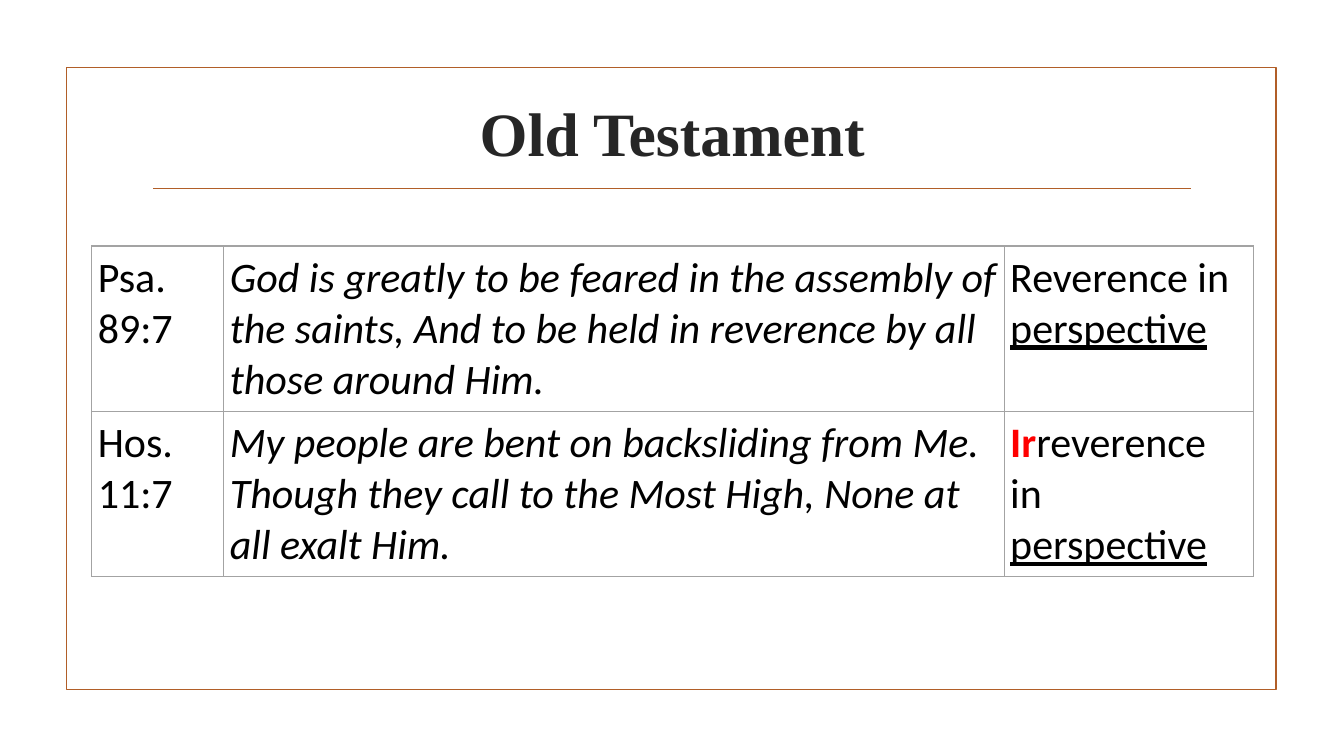
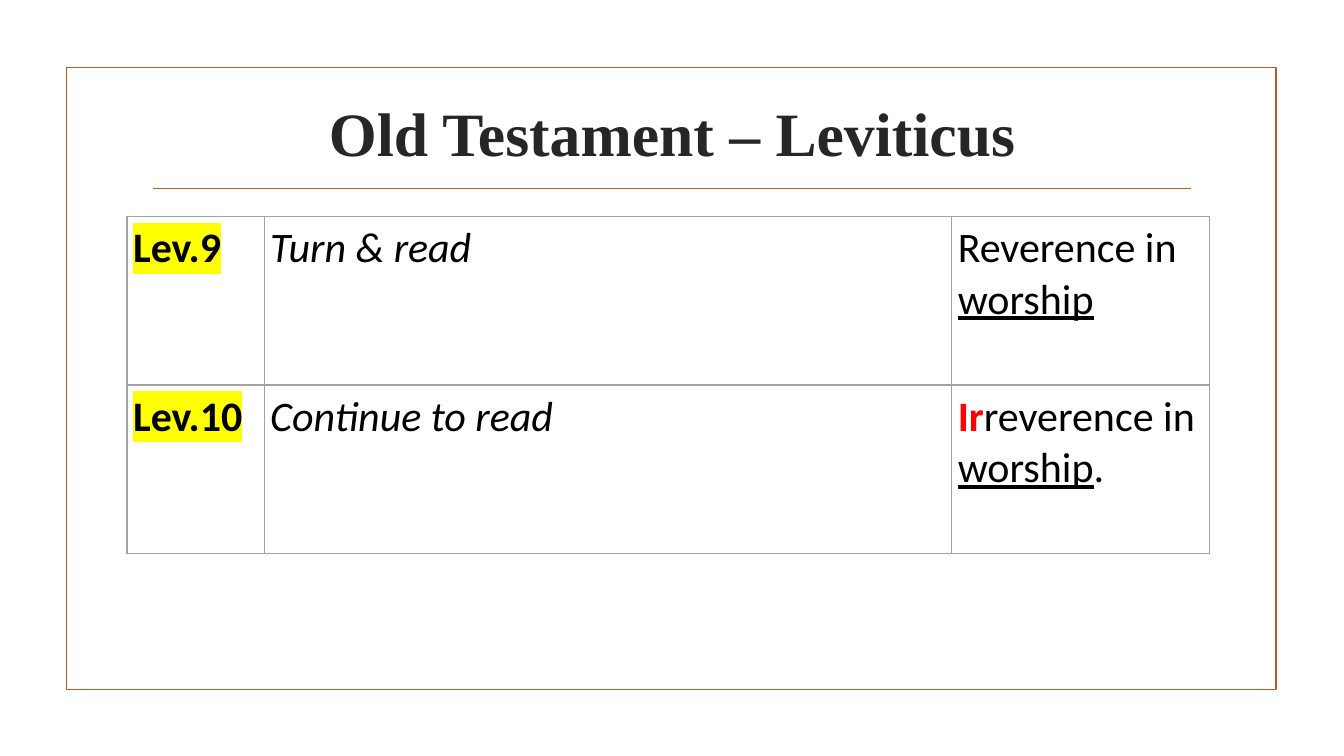
from dataclasses import dataclass

from lxml import etree
from pptx import Presentation
from pptx.dml.color import RGBColor
from pptx.enum.shapes import MSO_CONNECTOR, MSO_SHAPE
from pptx.enum.text import MSO_ANCHOR, PP_ALIGN
from pptx.oxml.ns import qn
from pptx.slide import Slide
from pptx.table import _Cell
from pptx.text.text import _Run
from pptx.util import Inches, Pt

RECTANGLE = MSO_SHAPE.RECTANGLE
STRAIGHT = MSO_CONNECTOR.STRAIGHT
MIDDLE = MSO_ANCHOR.MIDDLE
CENTER = PP_ALIGN.CENTER

SLIDE_WIDTH, SLIDE_HEIGHT = 13.33, 7.5
FRAME = (0.66, 0.67, 12, 6.17)
TITLE_AREA = (1.42, 0.83, 10.5, 0.96)
RULE_LEFT, RULE_RIGHT, RULE_TOP = 1.52, 11.81, 1.87
CELL_MARGIN = 0.06
COLORS = {
    "accent": "B15E28",
    "title": "262626",
    "text": "000000",
    "warning": "FF0000",
    "highlight": "FFFF00",
    "border": "A3A3A3",
}
TITLE_FONT, BODY_FONT = "Times New Roman", "Calibri"


@dataclass(frozen=True)
class Span:
    text: str
    bold: bool = False
    italic: bool = False
    underline: bool = False
    highlight: bool = False
    color: str = "text"


@dataclass(frozen=True)
class VersePage:
    title: str
    left: float
    top: float
    columns: tuple[float, ...]
    row_height: float
    rows: tuple[tuple[tuple[Span, ...], ...], ...]


def reverence(topic: str) -> tuple[Span, ...]:
    return Span("Reverence in "), Span(topic, underline=True)


def irreverence(topic: str) -> tuple[Span, ...]:
    return (
        Span("Ir", bold=True, color="warning"),
        Span("reverence in "),
        Span(topic, underline=True),
    )


def quote(text: str) -> tuple[Span, ...]:
    return (Span(text, italic=True),)


def chapter(text: str) -> tuple[Span, ...]:
    return (Span(text, bold=True, highlight=True),)


PAGES = (
    VersePage(
        "Old Testament", 0.91, 2.44, (1.31, 7.74, 2.47), 1.64,
        (
            (
                (Span("Psa. 89:7"),),
                quote("God is greatly to be feared in the assembly of the saints, "
                      "And to be held in reverence by all those around Him."),
                reverence("perspective"),
            ),
            (
                (Span("Hos. 11:7"),),
                quote("My people are bent on backsliding from Me. Though they call "
                      "to the Most High, None at all exalt Him."),
                irreverence("perspective"),
            ),
        ),
    ),
    VersePage(
        "Old Testament – Leviticus", 1.26, 2.15, (1.36, 6.82, 2.56), 1.67,
        (
            (chapter("Lev.9"), quote("Turn & read"), reverence("worship")),
            (chapter("Lev.10"), quote("Continue to read"),
             irreverence("worship") + (Span("."),)),
        ),
    ),
)


def rgb(name: str) -> RGBColor:
    return RGBColor.from_string(COLORS[name])


def add_solid_fill(parent: etree._Element, color: str) -> None:
    fill = etree.SubElement(parent, qn("a:solidFill"))
    etree.SubElement(fill, qn("a:srgbClr"), val=COLORS[color])


def draw_decor(page: Slide) -> None:
    """Draw the frame and the rule under the title."""
    frame = page.shapes.add_shape(RECTANGLE, *map(Inches, FRAME))
    frame.shadow.inherit = False
    frame.fill.background()
    ends = (RULE_LEFT, RULE_TOP, RULE_RIGHT, RULE_TOP)
    rule = page.shapes.add_connector(STRAIGHT, *map(Inches, ends))
    etree.SubElement(rule.line._get_or_add_ln().getparent(), qn("a:effectLst"))
    for shape in (frame, rule):
        shape.line.color.rgb = rgb("accent")
        shape.line.width = Pt(1.25)


def draw_title(page: Slide, title: str) -> None:
    box = page.shapes.add_textbox(*map(Inches, TITLE_AREA))
    frame = box.text_frame
    frame.word_wrap = True
    frame.vertical_anchor = MIDDLE
    frame.text = title
    para = frame.paragraphs[0]
    para.alignment = CENTER
    font = para.runs[0].font
    font.name, font.size, font.bold = TITLE_FONT, Pt(44), True
    font.color.rgb = rgb("title")


def format_run(run: _Run, span: Span) -> None:
    font = run.font
    font.name, font.size = BODY_FONT, Pt(30)
    font.bold, font.italic, font.underline = span.bold, span.italic, span.underline
    font.color.rgb = rgb(span.color)
    if span.highlight:
        mark = etree.Element(qn("a:highlight"))
        etree.SubElement(mark, qn("a:srgbClr"), val=COLORS["highlight"])
        run._r.get_or_add_rPr().find(qn("a:solidFill")).addnext(mark)


def fill_cell(cell: _Cell, spans: tuple[Span, ...]) -> None:
    margin = Inches(CELL_MARGIN)
    cell.margin_left = cell.margin_right = margin
    cell.margin_top = cell.margin_bottom = margin
    properties = cell._tc.get_or_add_tcPr()
    for side in ("lnL", "lnR", "lnT", "lnB"):
        border = etree.SubElement(properties, qn(f"a:{side}"), w=str(Pt(1)))
        add_solid_fill(border, "border")
    cell.fill.background()
    para = cell.text_frame.paragraphs[0]
    for span in spans:
        run = para.add_run()
        run.text = span.text
        format_run(run, span)


def draw_verses(page: Slide, content: VersePage) -> None:
    row_count = len(content.rows)
    area = (content.left, content.top, sum(content.columns),
            row_count * content.row_height)
    table = page.shapes.add_table(
        row_count, len(content.columns), *map(Inches, area)).table
    table.first_row = table.horz_banding = False
    for column, width in zip(table.columns, content.columns):
        column.width = Inches(width)
    for row, cells in zip(table.rows, content.rows):
        row.height = Inches(content.row_height)
        for cell, spans in zip(row.cells, cells):
            fill_cell(cell, spans)


def main() -> None:
    deck = Presentation()
    deck.slide_width, deck.slide_height = Inches(SLIDE_WIDTH), Inches(SLIDE_HEIGHT)
    blank = deck.slide_layouts[6]
    for content in PAGES:
        page = deck.slides.add_slide(blank)
        draw_decor(page)
        draw_title(page, content.title)
        draw_verses(page, content)
    deck.save("out.pptx")


if __name__ == "__main__":
    main()
